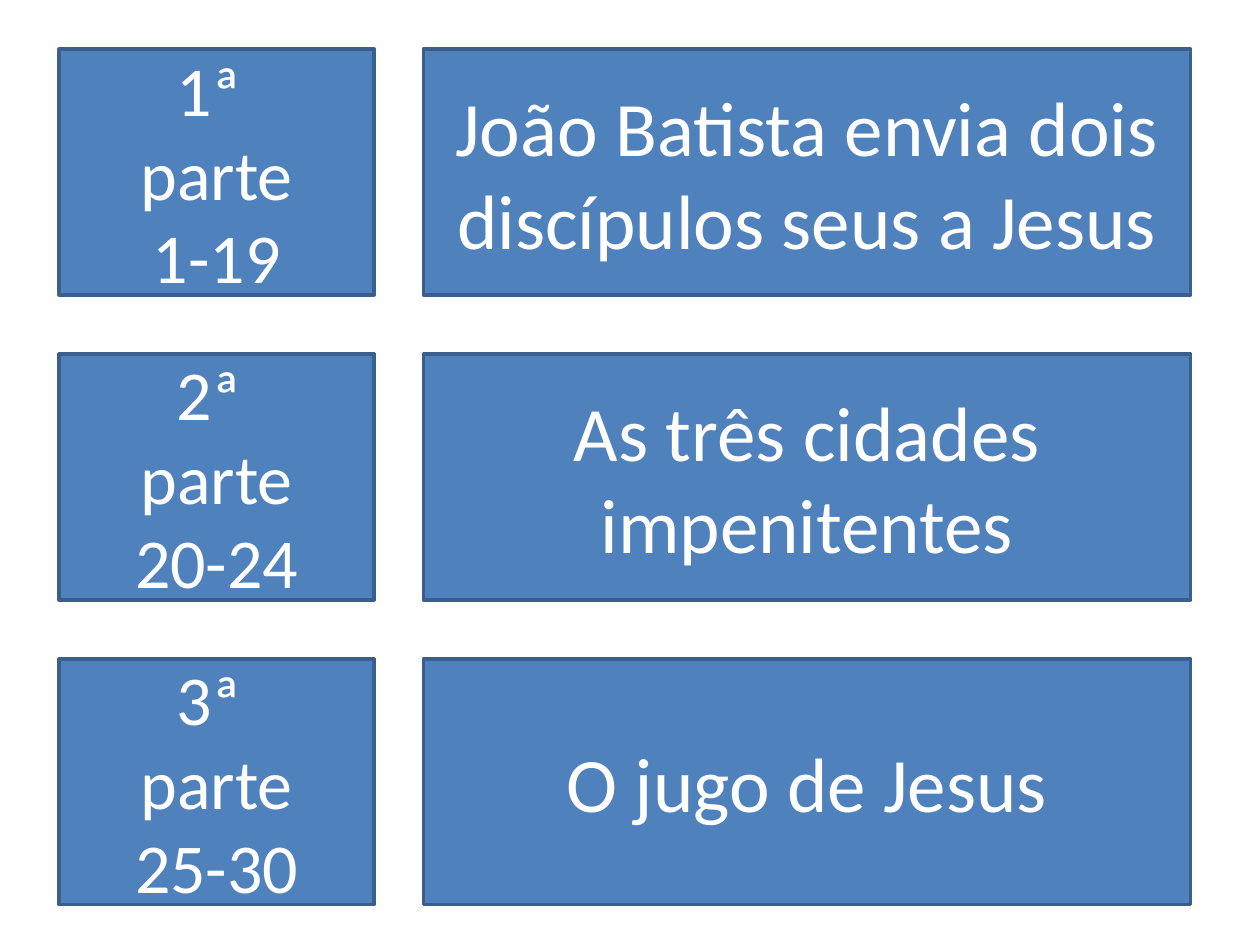
import dataclasses
import pptx
import pptx.dml.color
import pptx.enum.shapes
import pptx.enum.text
import pptx.util


@dataclasses.dataclass(frozen=True)
class Theme:
    font: str = "Calibri"
    fill: str = "4F81BD"
    outline: str = "3A5F8C"
    text: str = "FFFFFF"
    outline_width: int = 2
    part_size: int = 40
    subject_size: int = 44


@dataclasses.dataclass(frozen=True)
class Box:
    left: float
    top: float
    width: float
    height: float

    def column(self, start, share):
        return Box(self.left + self.width * start, self.top, self.width * share, self.height)


THEME = Theme()
SLIDE_WIDTH = pptx.util.Inches(10)
SLIDE_HEIGHT = pptx.util.Inches(7.5)
GRID = 100
ROW_PITCH = 32.27
FIRST_ROW = Box(4.7, 5.2, 89.8, 26)
PART_SHARE = 25 / FIRST_ROW.width
SUBJECT_SHARE = 60.9 / FIRST_ROW.width

SECTIONS = [
    ("1ª \nparte\n1-19", "João Batista envia dois\ndiscípulos seus a Jesus"),
    ("2ª \nparte\n20-24", "As três cidades impenitentes"),
    ("3ª \nparte\n25-30", "O jugo de Jesus"),
]


def color(value):
    return pptx.dml.color.RGBColor.from_string(value)


def add_panel(page, box, text, size):
    panel = page.shapes.add_shape(
        pptx.enum.shapes.MSO_SHAPE.RECTANGLE,
        round(SLIDE_WIDTH * box.left / GRID),
        round(SLIDE_HEIGHT * box.top / GRID),
        round(SLIDE_WIDTH * box.width / GRID),
        round(SLIDE_HEIGHT * box.height / GRID),
    )
    panel.shadow.inherit = False
    panel.fill.solid()
    panel.fill.fore_color.rgb = color(THEME.fill)
    panel.line.color.rgb = color(THEME.outline)
    panel.line.width = pptx.util.Pt(THEME.outline_width)
    frame = panel.text_frame
    frame.text = text
    frame.word_wrap = True
    frame.vertical_anchor = pptx.enum.text.MSO_ANCHOR.MIDDLE
    for para in frame.paragraphs:
        para.alignment = pptx.enum.text.PP_ALIGN.CENTER
        for span in para.runs:
            span.font.name = THEME.font
            span.font.size = pptx.util.Pt(size)
            span.font.color.rgb = color(THEME.text)


def add_section(page, box, part, subject):
    add_panel(page, box.column(0, PART_SHARE), part, THEME.part_size)
    add_panel(page, box.column(1 - SUBJECT_SHARE, SUBJECT_SHARE), subject, THEME.subject_size)


def main():
    deck = pptx.Presentation()
    deck.slide_width = SLIDE_WIDTH
    deck.slide_height = SLIDE_HEIGHT
    page = deck.slides.add_slide(deck.slide_layouts[6])
    for index, (part, subject) in enumerate(SECTIONS):
        row = dataclasses.replace(FIRST_ROW, top=FIRST_ROW.top + index * ROW_PITCH)
        add_section(page, row, part, subject)
    deck.save("out.pptx")


if __name__ == "__main__":
    main()
